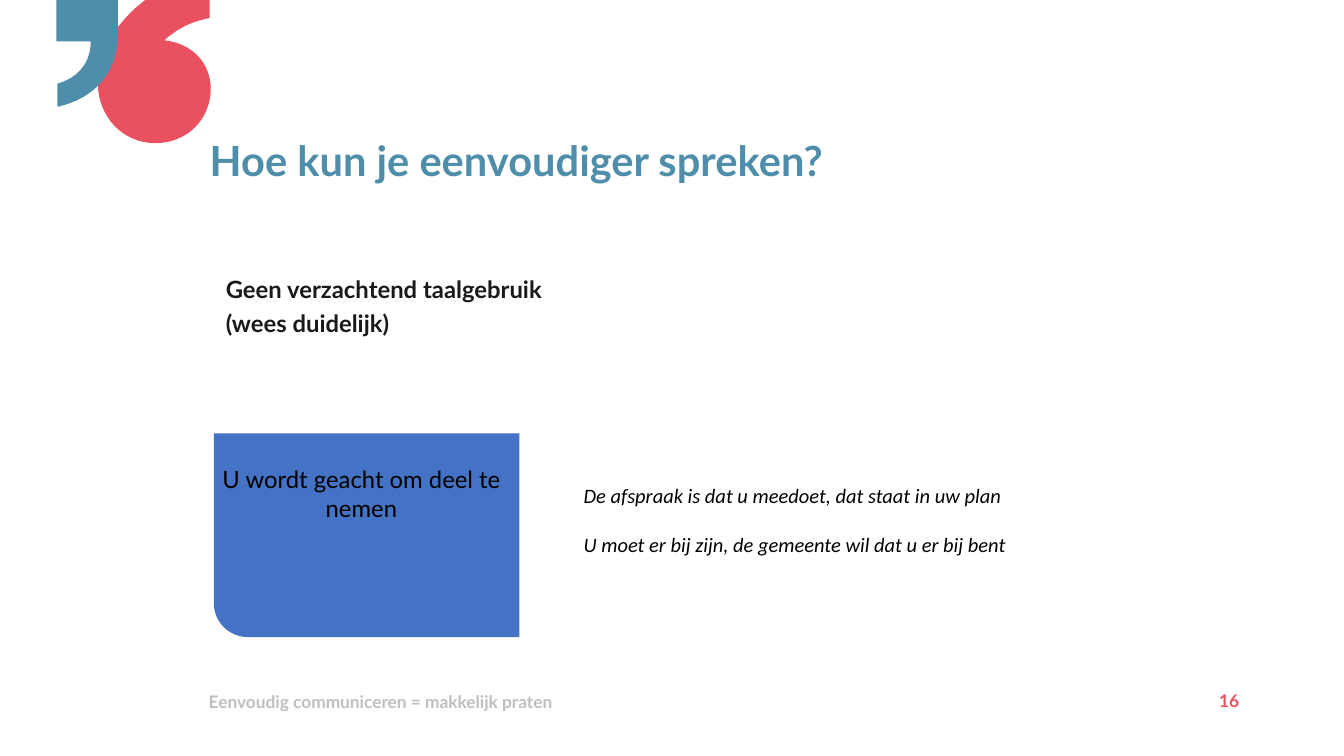
"""Build the slide on speaking more simply, with two quote marks and an example."""
from pptx import Presentation
from pptx.dml.color import RGBColor as RGB
from pptx.enum.shapes import MSO_SHAPE as Kind
from pptx.enum.text import PP_ALIGN as Align
from pptx.util import Inches, Pt

HUES = {"blue": "4F8EAB", "red": "EA5160", "box": "4472C4",
        "grey": "BFBFBF", "dark": "191919", "black": "000000"}

deck = Presentation()
deck.slide_width, deck.slide_height = Inches(13.33), Inches(7.5)
slide = deck.slides.add_slide(deck.slide_layouts[6])
shapes = slide.shapes


def paint(shape, hue):
    shape.shadow.inherit = False
    shape.fill.solid()
    shape.fill.fore_color.rgb = RGB.from_string(HUES[hue])
    shape.line.fill.background()


def write(lines, place, size, hue, face="Lato", bold=False, slant=False,
          align=Align.LEFT, side=0, top=0.01, lead=1.0, gap=0):
    frame = shapes.add_textbox(*map(Inches, place)).text_frame
    frame.word_wrap = True
    frame.margin_left = frame.margin_right = Inches(side)
    frame.margin_top, frame.margin_bottom = Inches(top), 0
    for i, line in enumerate(lines):
        para = frame.paragraphs[0] if i == 0 else frame.add_paragraph()
        para.text = line
        para.alignment, para.line_spacing = align, lead
        if i:
            para.space_before = Pt(gap)
        font = para.font
        font.name, font.size, font.bold, font.italic = face, Pt(size), bold, slant
        font.color.rgb = RGB.from_string(HUES[hue])


# Each step is one end point, or two control points and an end point.
marks = [
    ("red", (2.08, 0), [
        [(1.44, 0)],
        [(1.15, 0.22), (0.97, 0.52), (0.97, 0.82)],
        [(0.97, 1.15), (1.21, 1.42), (1.54, 1.42)],
        [(1.86, 1.42), (2.09, 1.18), (2.09, 0.88)],
        [(2.09, 0.62), (1.9, 0.43), (1.63, 0.4)],
        [(1.75, 0.29), (1.9, 0.21), (2.08, 0.18)]]),
    ("blue", (1.17, 0), [
        [(0.56, 0)], [(0.56, 0.41)], [(0.9, 0.41)],
        [(0.9, 0.62), (0.78, 0.77), (0.57, 0.83)],
        [(0.57, 1.06)],
        [(0.93, 0.98), (1.17, 0.73), (1.17, 0.34)]]),
]
for hue, start, steps in marks:
    points = [start]
    for step in steps:
        if len(step) == 1:
            points += step
            continue
        a, (b, c, d) = points[-1], step
        for k in range(1, 17):
            t = k / 16
            u = 1 - t
            points.append(tuple(
                u**3 * a[n] + 3 * u * u * t * b[n] + 3 * u * t * t * c[n] + t**3 * d[n]
                for n in (0, 1)))
    spots = [(Inches(x), Inches(y)) for x, y in points]
    pen = shapes.build_freeform(*spots[0])
    pen.add_line_segments(spots[1:], close=True)
    paint(pen.convert_to_shape(), hue)

card = shapes.add_shape(Kind.ROUND_1_RECTANGLE, Inches(2.12), Inches(4.3),
                        Inches(3.03), Inches(2.02))
card.rotation = 180
card.adjustments[0] = 0.167
paint(card, "box")

write(["Hoe kun je eenvoudiger spreken?"], (2.08, 1.38, 6.84, 0.46),
      29.7, "blue", bold=True, lead=0.9)
write(["Geen verzachtend taalgebruik", "(wees duidelijk)"], (2.24, 2.6, 3.26, 1.1),
      17, "dark", bold=True, top=0.07, lead=1.2)
write(["U wordt geacht om deel te nemen"], (2.07, 4.55, 3.03, 1.49),
      17, "black", align=Align.CENTER, top=0.06)
write(["De afspraak is dat u meedoet, dat staat in uw plan",
       "U moet er bij zijn, de gemeente wil dat u er bij bent"],
      (5.69, 4.55, 4.93, 1.39), 14.6, "black", face="Calibri", slant=True,
      side=0.1, top=0.24, gap=17.8)
write(["Eenvoudig communiceren = makkelijk praten"], (2.07, 6.85, 4.85, 0.22),
      12.4, "grey", bold=True)
write(["16"], (9.21, 6.84, 3.08, 0.22), 12.4, "red", bold=True, align=Align.RIGHT)

deck.save("out.pptx")
